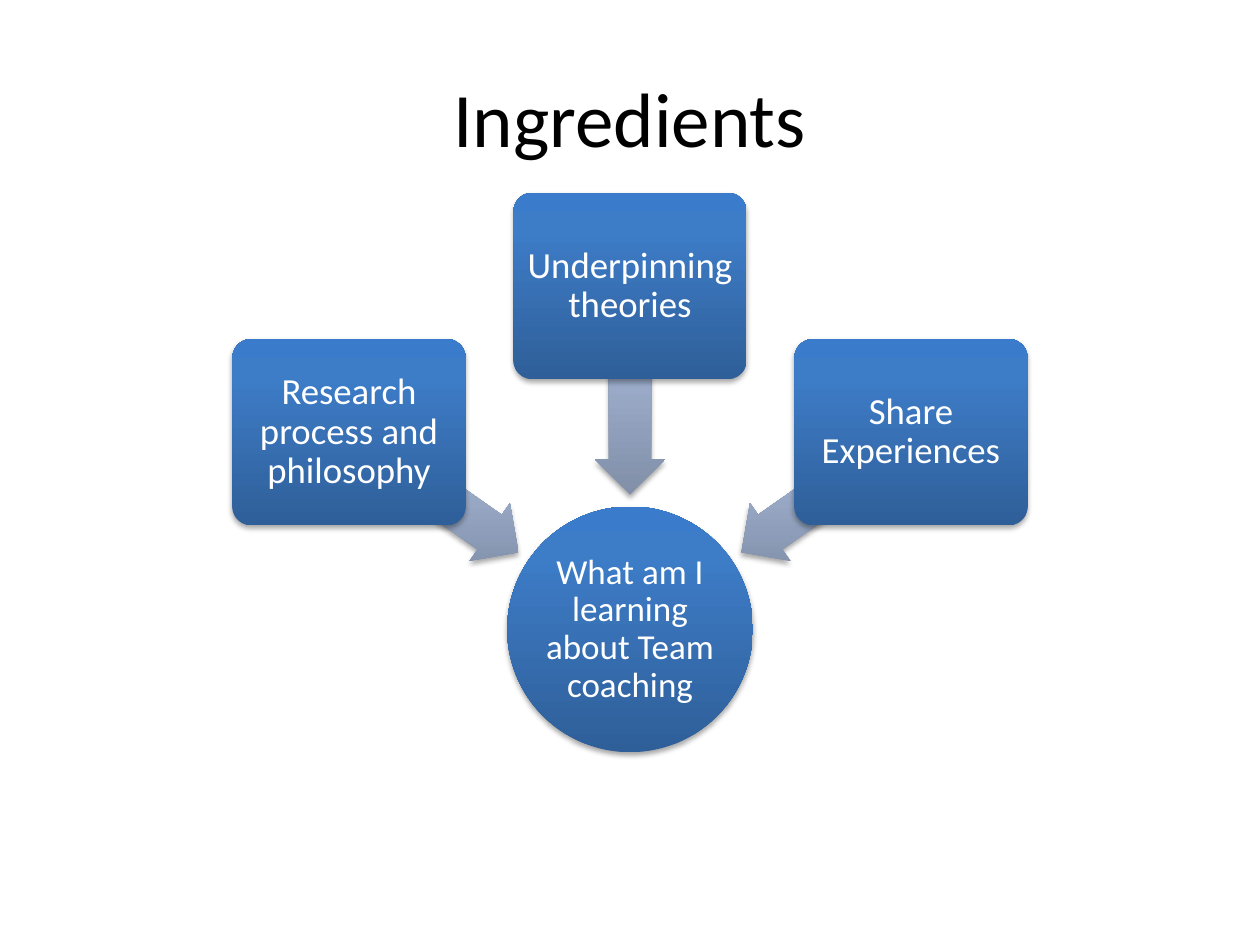
from lxml import etree
from pptx import Presentation
from pptx.dml.color import RGBColor
from pptx.enum.shapes import MSO_SHAPE
from pptx.enum.text import MSO_ANCHOR, PP_ALIGN
from pptx.oxml import parse_xml
from pptx.oxml.ns import nsdecls, qn
from pptx.util import Inches, Pt

COLOURS = {
    "title": "000000",
    "label": "FFFFFF",
    "shadow": "000000",
    "node_dark": "2F5F99",
    "node_mid": "3D7CC7",
    "node_light": "3A7CCB",
    "arrow_dark": "818FA8",
    "arrow_mid": "A7B9DA",
    "arrow_light": "A7BADC",
}
CENTRE_X = 5
NODE_WIDTH, NODE_HEIGHT = 1.85, 1.48
ARROW_WIDTH, ARROW_HEIGHT = 1.65, 0.56
CIRCLE_SIZE, CIRCLE_TOP = 1.95, 4.02
INGREDIENTS = [
    ("Research process and philosophy", -2.23, 2.69, -1.56, 3.63, 215),
    ("Underpinning theories", 0, 1.53, 0, 2.82, 270),
    ("Share Experiences", 2.23, 2.69, 1.56, 3.63, 325),
]


def write_text(shape, text, size, colour, margin=0.04, spacing=1.0):
    frame = shape.text_frame
    frame.word_wrap = True
    frame.vertical_anchor = MSO_ANCHOR.MIDDLE
    frame.margin_left = frame.margin_right = Inches(margin)
    frame.margin_top = frame.margin_bottom = Inches(margin)
    paragraph = frame.paragraphs[0]
    paragraph.alignment = PP_ALIGN.CENTER
    paragraph.line_spacing = spacing
    run = paragraph.add_run()
    run.text = text
    run.font.name = "Calibri"
    run.font.size = Pt(size)
    run.font.color.rgb = RGBColor.from_string(COLOURS[colour])


def apply_gradient(shape, family):
    shape.fill.gradient()
    gradient = shape.element.spPr.find(qn("a:gradFill"))
    gradient.set("rotWithShape", "0")
    stops = gradient.find(qn("a:gsLst"))
    for stop in list(stops):
        stops.remove(stop)
    for position, tone in ((0, "dark"), (80, "mid"), (100, "light")):
        stop = etree.SubElement(stops, qn("a:gs"), pos=str(position * 1000))
        etree.SubElement(stop, qn("a:srgbClr"), val=COLOURS[f"{family}_{tone}"])
    shape.fill.gradient_angle = 90


def apply_shadow(shape):
    shape.shadow.inherit = False
    effects = shape.element.spPr.find(qn("a:effectLst"))
    effects.append(parse_xml(
        f'<a:outerShdw {nsdecls("a")} blurRad="{Pt(3.1)}" dist="{Pt(1.8)}" '
        'dir="5400000" rotWithShape="0">'
        f'<a:srgbClr val="{COLOURS["shadow"]}"><a:alpha val="35000"/></a:srgbClr>'
        '</a:outerShdw>'
    ))


def add_part(slide, preset, centre_x, top, width, height, family):
    part = slide.shapes.add_shape(
        preset, Inches(centre_x - width / 2), Inches(top), Inches(width), Inches(height)
    )
    part.line.fill.background()
    apply_gradient(part, family)
    apply_shadow(part)
    return part


def add_title(slide, text):
    title = slide.shapes.add_textbox(Inches(0.5), Inches(0.3), Inches(9), Inches(1.25))
    write_text(title, text, 44, "title", margin=0.05)


def add_outcome(slide, text):
    outcome = add_part(slide, MSO_SHAPE.OVAL, CENTRE_X, CIRCLE_TOP,
                       CIRCLE_SIZE, CIRCLE_SIZE, "node")
    write_text(outcome, text, 20, "label", margin=0.01, spacing=0.9)


def add_arrow(slide, centre_x, top, rotation):
    arrow = add_part(slide, MSO_SHAPE.LEFT_ARROW, centre_x, top,
                     ARROW_WIDTH, ARROW_HEIGHT, "arrow")
    arrow.adjustments[0] = 0.6
    arrow.adjustments[1] = 0.5
    arrow.rotation = rotation


def add_ingredient(slide, text, centre_x, top):
    ingredient = add_part(slide, MSO_SHAPE.ROUNDED_RECTANGLE, centre_x, top,
                          NODE_WIDTH, NODE_HEIGHT, "node")
    ingredient.adjustments[0] = 0.1
    write_text(ingredient, text, 21, "label", spacing=0.9)


def main():
    presentation = Presentation()
    presentation.slide_width = Inches(10)
    presentation.slide_height = Inches(7.5)
    slide = presentation.slides.add_slide(presentation.slide_layouts[6])
    add_title(slide, "Ingredients")
    add_outcome(slide, "What am I learning about Team coaching")
    for text, offset, top, arrow_offset, arrow_top, rotation in INGREDIENTS:
        add_arrow(slide, CENTRE_X + arrow_offset, arrow_top, rotation)
        add_ingredient(slide, text, CENTRE_X + offset, top)
    presentation.save("out.pptx")


if __name__ == "__main__":
    main()
